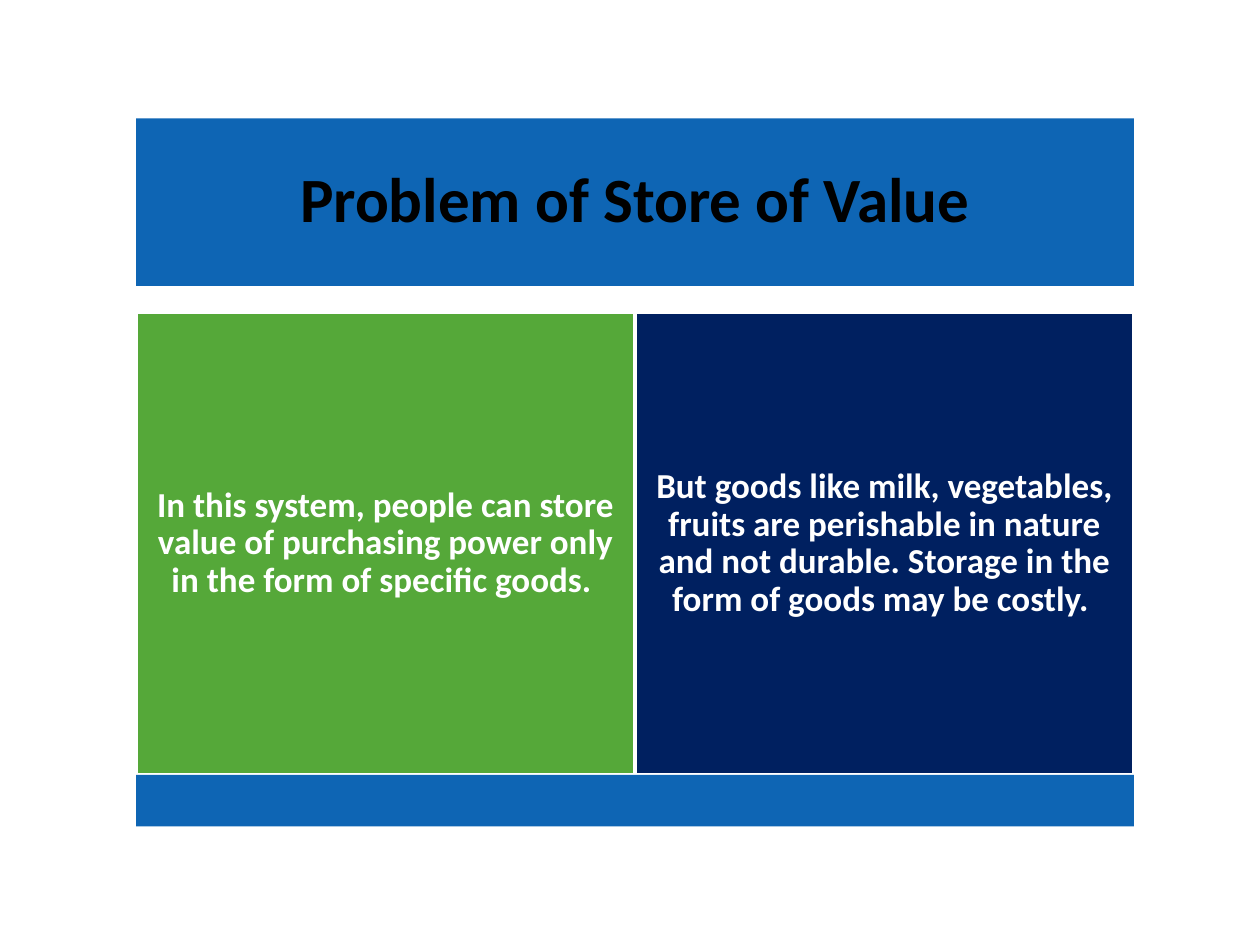
import pptx
import pptx.util
import pptx.dml.color
import pptx.enum.shapes
import pptx.enum.text

COLORS = {
    "band": "0E65B4",
    "green": "55A839",
    "navy": "002060",
    "white": "FFFFFF",
    "black": "000000",
}
LEFT, COL = 1.08, 3.96
ROWS = {"title": (0.94, 1.33), "body": (2.48, 3.67), "footer": (6.15, 0.41)}

prs = pptx.Presentation()
prs.slide_width = pptx.util.Inches(10)
prs.slide_height = pptx.util.Inches(7.5)
s = prs.slides.add_slide(prs.slide_layouts[6])


def rgb(name):
    return pptx.dml.color.RGBColor.from_string(COLORS[name])


blocks = [
    ("title", 0, 2, "band", None, "Problem of Store of Value", 36, "black", 0.15),
    ("body", 0, 1, "green", "white",
     "In this system, people can store value of purchasing power only "
     "in the form of specific goods. ", 20, "white", 0.08),
    ("body", 1, 1, "navy", "white",
     "But goods like milk, vegetables, fruits are perishable in nature "
     "and not durable. Storage in the form of goods may be costly. ", 20, "white", 0.08),
    ("footer", 0, 2, "band", None, "", 0, None, 0),
]

for row, col, span, fill, line, text, size, color, inset in blocks:
    top, height = ROWS[row]
    sp = s.shapes.add_shape(
        pptx.enum.shapes.MSO_SHAPE.RECTANGLE,
        pptx.util.Inches(LEFT + col * COL), pptx.util.Inches(top),
        pptx.util.Inches(span * COL), pptx.util.Inches(height))
    sp.shadow.inherit = False
    sp.fill.solid()
    sp.fill.fore_color.rgb = rgb(fill)
    if line:
        sp.line.color.rgb = rgb(line)
        sp.line.width = pptx.util.Pt(2)
    else:
        sp.line.fill.background()
    if not text:
        continue
    tf = sp.text_frame
    tf.word_wrap = True
    tf.vertical_anchor = pptx.enum.text.MSO_ANCHOR.MIDDLE
    tf.margin_left = tf.margin_right = pptx.util.Inches(inset)
    tf.margin_top = tf.margin_bottom = pptx.util.Inches(inset)
    p = tf.paragraphs[0]
    p.text = text
    p.alignment = pptx.enum.text.PP_ALIGN.CENTER
    p.line_spacing = 0.9
    p.font.name = "Calibri"
    p.font.size = pptx.util.Pt(size)
    p.font.bold = True
    p.font.color.rgb = rgb(color)

prs.save("out.pptx")
